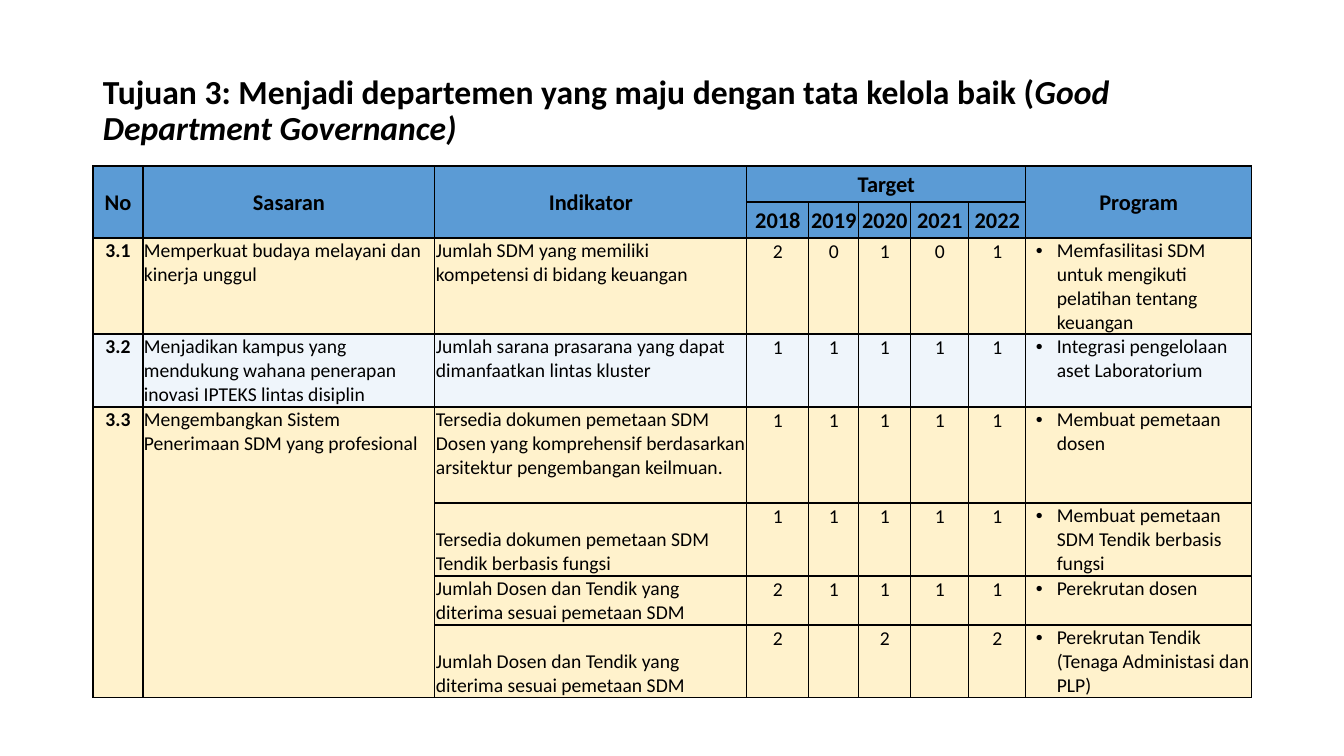
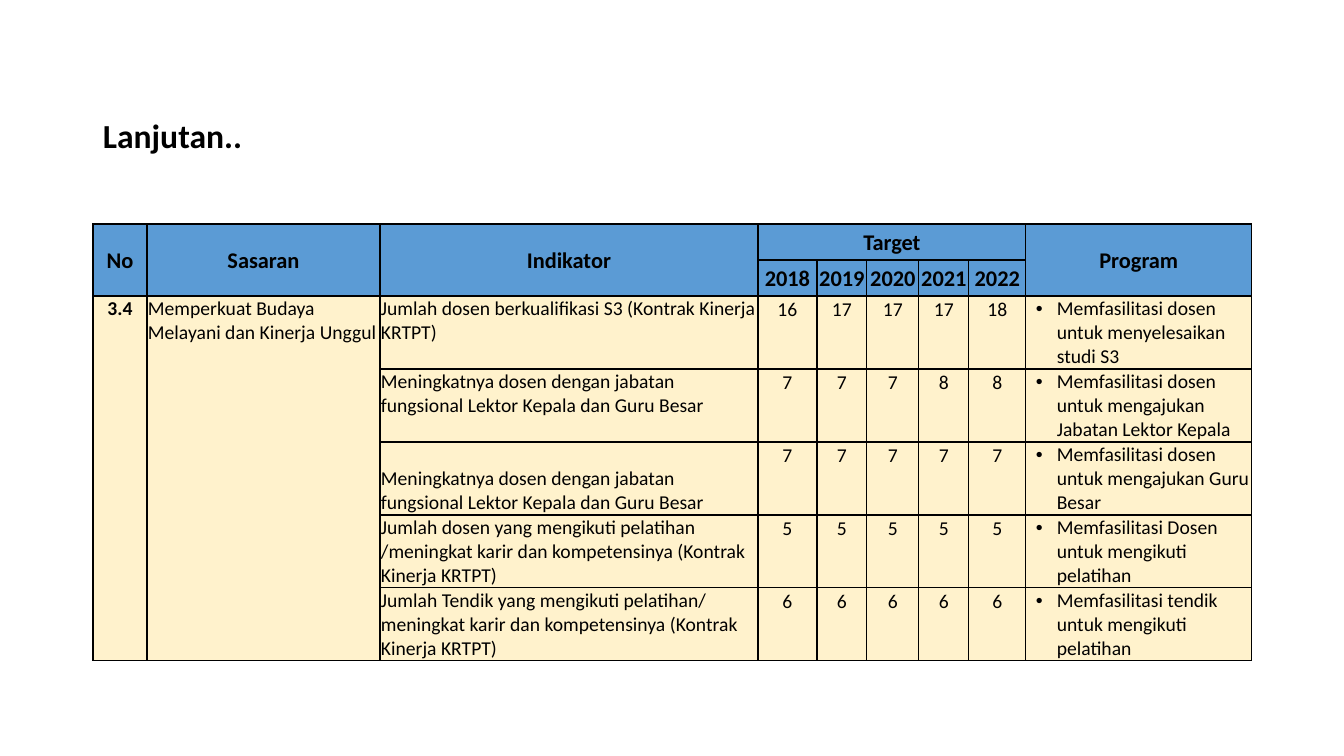
import lxml.etree
import pptx
import pptx.dml.color
import pptx.enum.text
import pptx.oxml.ns
import pptx.util

PX = 914400 / 100.8
FONT = "Calibri"
BLACK, BLUE, CREAM, ICE = "000000", "5B9BD5", "FFF2CC", "EFF5FB"
LEFT, WIDTH = 93, 1159
HEAD = 36
YEARS = ["2018", "2019", "2020", "2021", "2022"]
PROGRAM = 8

ALIGN = pptx.enum.text.PP_ALIGN
ANCHOR = pptx.enum.text.MSO_ANCHOR
TOP, MIDDLE, BOTTOM = ANCHOR.TOP, ANCHOR.MIDDLE, ANCHOR.BOTTOM
sub = lxml.etree.SubElement
qn = pptx.oxml.ns.qn


def rgb(code):
    return pptx.dml.color.RGBColor.from_string(code)


def put(cell, text, size=14, bold=False, align=ALIGN.LEFT, anchor=TOP,
        side=1, space=None, bullet=False):
    """Write styled text into a table cell."""
    cell.margin_left = cell.margin_right = round(side * PX)
    cell.margin_top = round(PX) if side == 1 else 0
    cell.margin_bottom = 0
    cell.vertical_anchor = anchor
    para = cell.text_frame.paragraphs[0]
    para.text = text
    para.alignment = align
    if space:
        para.line_spacing = space
    if bullet:
        props = para._p.get_or_add_pPr()
        props.set("marL", str(round(30 * PX)))
        props.set("indent", str(round(-21 * PX)))
        sub(props, qn("a:buFont"), typeface="Arial")
        sub(props, qn("a:buChar"), char="•")
    para.font.name = FONT
    para.font.size = pptx.util.Pt(size)
    para.font.bold = bold
    para.font.color.rgb = rgb(BLACK)


# Goal: number, aim, fill, then rows of indicator, anchor, targets, program
pages = [
    {
        "title": [("Tujuan 3: Menjadi departemen yang maju dengan tata kelola baik (", False),
                  ("Good Department Governance)", True)],
        "title_top": 76,
        "top": 166,
        "cols": [50, 292, 312, 62, 50, 52, 58, 57, 226],
        "rows": [96, 73, 96, 73, 49, 73],
        "goals": [
            ("3.1", "Memperkuat budaya melayani dan kinerja unggul", CREAM, [
                ("Jumlah SDM yang memiliki kompetensi di bidang keuangan", TOP,
                 [2, 0, 1, 0, 1],
                 "Memfasilitasi SDM untuk mengikuti pelatihan tentang keuangan"),
            ]),
            ("3.2", "Menjadikan kampus yang mendukung wahana penerapan inovasi IPTEKS lintas disiplin", ICE, [
                ("Jumlah sarana prasarana yang dapat dimanfaatkan lintas kluster", TOP,
                 [1, 1, 1, 1, 1], "Integrasi pengelolaan aset Laboratorium"),
            ]),
            ("3.3", "Mengembangkan Sistem Penerimaan SDM yang profesional", CREAM, [
                ("Tersedia dokumen pemetaan SDM Dosen yang komprehensif berdasarkan "
                 "arsitektur pengembangan keilmuan.", TOP,
                 [1, 1, 1, 1, 1], "Membuat pemetaan dosen"),
                ("Tersedia dokumen pemetaan SDM Tendik berbasis fungsi", BOTTOM,
                 [1, 1, 1, 1, 1], "Membuat pemetaan SDM Tendik berbasis fungsi"),
                ("Jumlah Dosen dan Tendik yang diterima sesuai pemetaan SDM", BOTTOM,
                 [2, 1, 1, 1, 1], "Perekrutan dosen"),
                ("Jumlah Dosen dan Tendik yang diterima sesuai pemetaan SDM", BOTTOM,
                 [2, "", 2, "", 2], "Perekrutan Tendik (Tenaga Administasi dan PLP)"),
            ]),
        ],
    },
    {
        "title": [("Lanjutan..", False)],
        "title_top": 102,
        "top": 224,
        "cols": [54, 233, 378, 59, 50, 52, 50, 57, 226],
        "rows": [73, 73, 73, 73, 73],
        "goals": [
            ("3.4", "Memperkuat Budaya Melayani dan Kinerja Unggul", CREAM, [
                ("Jumlah dosen berkualifikasi S3 (Kontrak Kinerja KRTPT)", TOP,
                 [16, 17, 17, 17, 18], "Memfasilitasi dosen untuk menyelesaikan studi S3"),
                ("Meningkatnya dosen dengan jabatan fungsional Lektor Kepala dan Guru Besar", TOP,
                 [7, 7, 7, 8, 8], "Memfasilitasi dosen untuk mengajukan Jabatan Lektor Kepala"),
                ("Meningkatnya dosen dengan jabatan fungsional Lektor Kepala dan Guru Besar", BOTTOM,
                 [7, 7, 7, 7, 7], "Memfasilitasi dosen untuk mengajukan Guru Besar"),
                ("Jumlah dosen yang mengikuti pelatihan /meningkat karir dan kompetensinya "
                 "(Kontrak Kinerja KRTPT)", BOTTOM,
                 [5, 5, 5, 5, 5], "Memfasilitasi Dosen untuk mengikuti pelatihan"),
                ("Jumlah Tendik yang mengikuti pelatihan/ meningkat karir dan kompetensinya "
                 "(Kontrak Kinerja KRTPT)", BOTTOM,
                 [6, 6, 6, 6, 6], "Memfasilitasi tendik untuk mengikuti pelatihan"),
            ]),
        ],
    },
]

deck = pptx.Presentation()
deck.slide_width = round(1344 * PX)
deck.slide_height = round(756 * PX)

for page in pages:
    slide = deck.slides.add_slide(deck.slide_layouts[6])

    box = slide.shapes.add_textbox(round(LEFT * PX), round(page["title_top"] * PX),
                                   round(WIDTH * PX), round(71 * PX))
    frame = box.text_frame
    frame.word_wrap = True
    frame.vertical_anchor = MIDDLE
    para = frame.paragraphs[0]
    para.line_spacing = 0.9
    para.font.name = FONT
    para.font.size = pptx.util.Pt(24)
    para.font.bold = True
    para.font.color.rgb = rgb(BLACK)
    for text, slant in page["title"]:
        run = para.add_run()
        run.text = text
        if slant:
            run.font.italic = True

    sizes = [HEAD, HEAD] + page["rows"]
    table = slide.shapes.add_table(
        len(sizes), len(page["cols"]), round(LEFT * PX), round(page["top"] * PX),
        round(WIDTH * PX), round(sum(sizes) * PX)).table
    table.first_row = table.horz_banding = False
    for col, size in zip(table.columns, page["cols"]):
        col.width = round(size * PX)
    for row, size in zip(table.rows, sizes):
        row.height = round(size * PX)

    fills = [BLUE, BLUE] + [goal[2] for goal in page["goals"] for _ in goal[3]]
    for row, fill in zip(table.rows, fills):
        for cell in row.cells:
            props = cell._tc.get_or_add_tcPr()
            for edge in ("lnL", "lnR", "lnT", "lnB"):
                line = sub(props, qn("a:" + edge), w=str(pptx.util.Pt(1)))
                sub(sub(line, qn("a:solidFill")), qn("a:srgbClr"), val=BLACK)
            cell.fill.solid()
            cell.fill.fore_color.rgb = rgb(fill)

    heads = [(0, 0, "No"), (0, 1, "Sasaran"), (0, 2, "Indikator"),
             (0, 3, "Target"), (0, PROGRAM, "Program")]
    heads += [(1, col, year) for col, year in enumerate(YEARS, 3)]
    for row, col, text in heads:
        put(table.cell(row, col), text, 16, True, ALIGN.CENTER, MIDDLE)
    for col in (0, 1, 2, PROGRAM):
        table.cell(0, col).merge(table.cell(1, col))
    table.cell(0, 3).merge(table.cell(0, PROGRAM - 1))

    row = 2
    for number, aim, fill, items in page["goals"]:
        put(table.cell(row, 0), number, bold=True, align=ALIGN.CENTER)
        put(table.cell(row, 1), aim)
        if len(items) > 1:
            for col in (0, 1):
                table.cell(row, col).merge(table.cell(row + len(items) - 1, col))
        for sign, anchor, goals, program in items:
            put(table.cell(row, 2), sign, anchor=anchor)
            for col, value in enumerate(goals, 3):
                put(table.cell(row, col), str(value), align=ALIGN.CENTER, side=6, space=1.07)
            put(table.cell(row, PROGRAM), program, bullet=True)
            row += 1

deck.save("out.pptx")
